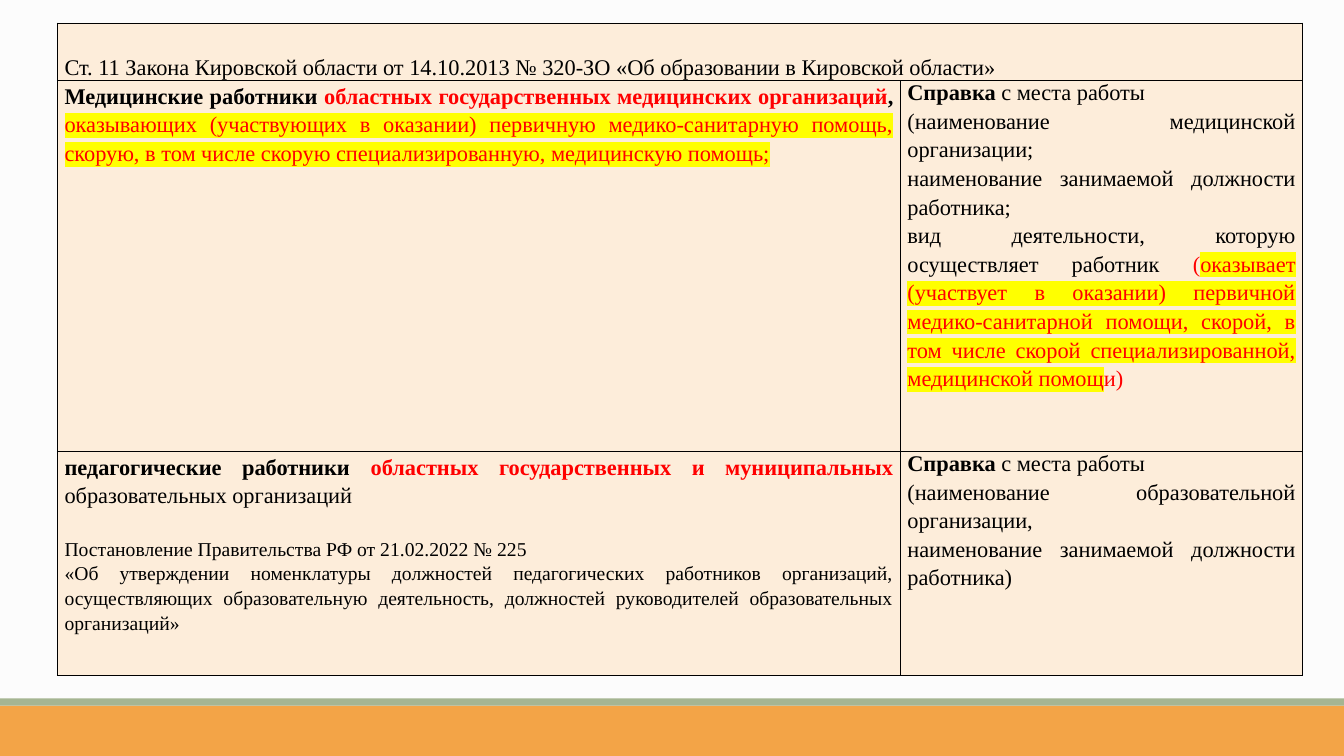
from pptx import Presentation
from pptx.dml.color import RGBColor
from pptx.enum.shapes import MSO_SHAPE
from pptx.enum.text import MSO_ANCHOR, PP_ALIGN
from pptx.oxml import parse_xml
from pptx.oxml.ns import nsdecls, qn
from pptx.util import Inches, Pt

COLS, ROWS = 133.3, 75
WIDE, HIGH = Inches(13.33), Inches(7.5)


def tint(code):
    return RGBColor.from_string(code)


class Page:
    font = "Times New Roman"
    ink = "000000"
    cream = "FDEDDA"
    marker = "FFFF00"

    def __init__(self, deck):
        self.slide = deck.slides.add_slide(deck.slide_layouts[6])
        back = self.slide.background.fill
        back.solid()
        back.fore_color.rgb = tint("FCFCFC")

    def x(self, cols):
        return round(WIDE * cols / COLS)

    def y(self, rows):
        return round(HIGH * rows / ROWS)

    def band(self, top, high, color):
        bar = self.slide.shapes.add_shape(
            MSO_SHAPE.RECTANGLE, 0, self.y(top), WIDE, self.y(high))
        bar.shadow.inherit = False
        bar.fill.solid()
        bar.fill.fore_color.rgb = tint(color)
        bar.line.fill.background()

    def grid(self, left, top, cols, rows):
        frame = self.slide.shapes.add_table(
            len(rows), len(cols), self.x(left), self.y(top),
            self.x(sum(cols)), self.y(sum(rows)))
        table = frame.table
        table.first_row = table.horz_banding = False
        for col, wide in zip(table.columns, cols):
            col.width = self.x(wide)
        for row, high in zip(table.rows, rows):
            row.height = self.y(high)
        for cell in table.iter_cells():
            self.frame(cell)
        return table

    def frame(self, cell):
        form = {"margin_left": Inches(0.07), "margin_right": Inches(0.07),
                "margin_top": 0, "margin_bottom": 0}
        for key, value in form.items():
            setattr(cell, key, value)
        props = cell._tc.get_or_add_tcPr()
        for side in "LRTB":
            props.append(parse_xml(
                f'<a:ln{side} {nsdecls("a")} w="12700"><a:solidFill>'
                f'<a:srgbClr val="{self.ink}"/></a:solidFill></a:ln{side}>'))
        cell.fill.solid()
        cell.fill.fore_color.rgb = tint(self.cream)

    def text(self, cell, paras):
        body = cell.text_frame
        for i, (form, runs) in enumerate(paras):
            para = body.add_paragraph() if i else body.paragraphs[0]
            look = {"alignment": PP_ALIGN.JUSTIFY, "line_spacing": 1.15} | form
            size = look.pop("size", 16)
            for key, value in look.items():
                setattr(para, key, value)
            for words, style in runs:
                self.run(para, words, size, **style)

    def run(self, para, words, size, color=ink, bold=False, mark=False):
        part = para.add_run()
        part.text = words
        form = {"name": self.font, "size": Pt(size), "bold": bold}
        for key, value in form.items():
            setattr(part.font, key, value)
        part.font.color.rgb = tint(color)
        if mark:
            fill = part._r.get_or_add_rPr().find(qn("a:solidFill"))
            fill.addnext(parse_xml(
                f'<a:highlight {nsdecls("a")}>'
                f'<a:srgbClr val="{self.marker}"/></a:highlight>'))


PLAIN = {}
BOLD = {"bold": True}
RED = {"color": "FF0000"}
STRONG = RED | BOLD
MARK = RED | {"mark": True}
SMALL = {"size": 14}
PROOF = ({"line_spacing": 1.0},
         [("Справка", BOLD), (" с места работы", PLAIN)])

LAW = [({}, [("Ст. 11 Закона Кировской области от 14.10.2013 № 320-ЗО "
              "«Об образовании в Кировской области»", PLAIN)])]
MEDICS = [({}, [
    ("Медицинские работники ", BOLD),
    ("областных государственных медицинских организаций", STRONG),
    (", ", BOLD),
    ("оказывающих (участвующих в оказании) первичную медико-санитарную "
     "помощь, скорую, в том числе скорую специализированную, "
     "медицинскую помощь;", MARK)])]
MEDIC_PROOF = [
    PROOF,
    ({}, [("(наименование медицинской организации;", PLAIN)]),
    ({}, [("наименование занимаемой должности работника;", PLAIN)]),
    ({}, [
        ("вид деятельности, которую осуществляет работник ", PLAIN),
        ("(", RED),
        ("оказывает (участвует в оказании) первичной медико-санитарной "
         "помощи, скорой, в том числе скорой специализированной, "
         "медицинской помощ", MARK),
        ("и)", RED)])]
TUTORS = [
    ({}, [
        ("педагогические работники ", BOLD),
        ("областных государственных и муниципальных", STRONG),
        (" образовательных организаций", PLAIN)]),
    (SMALL | {"space_before": Pt(19)},
     [("Постановление Правительства РФ от 21.02.2022 № 225", PLAIN)]),
    (SMALL, [
        ("«Об утверждении номенклатуры должностей педагогических работников "
         "организаций, осуществляющих образовательную деятельность, "
         "должностей руководителей образовательных организаций»", PLAIN)])]
TUTOR_PROOF = [
    PROOF,
    ({}, [("(наименование образовательной организации,", PLAIN)]),
    ({}, [("наименование занимаемой должности работника)", PLAIN)])]


def main():
    deck = Presentation()
    deck.slide_width, deck.slide_height = WIDE, HIGH
    page = Page(deck)
    page.band(70, 5, "F3A447")
    page.band(69.3, 0.7, "A5B592")
    table = page.grid(5.7, 2.3, [83.6, 39.9], [5.7, 36.8, 22.2])
    head = table.cell(0, 0)
    head.merge(table.cell(0, 1))
    head.vertical_anchor = MSO_ANCHOR.BOTTOM
    page.text(head, LAW)
    body = [[MEDICS, MEDIC_PROOF], [TUTORS, TUTOR_PROOF]]
    for r, row in enumerate(body, 1):
        for c, paras in enumerate(row):
            page.text(table.cell(r, c), paras)
    deck.save("out.pptx")


if __name__ == "__main__":
    main()
